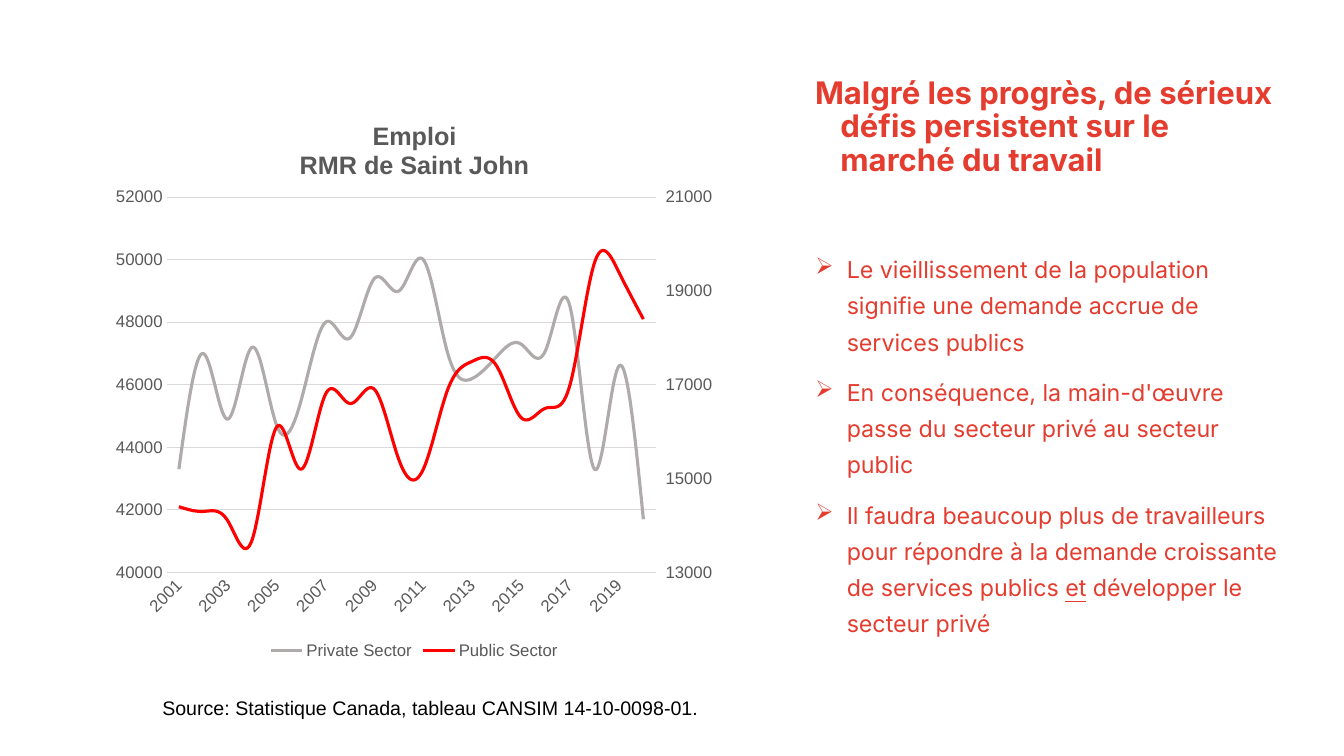
from copy import deepcopy
from dataclasses import dataclass

from lxml.etree import SubElement
from pptx import Presentation
from pptx.chart.axis import ValueAxis
from pptx.chart.data import CategoryChartData
from pptx.dml.color import RGBColor
from pptx.enum.chart import XL_CHART_TYPE as ChartType
from pptx.enum.chart import XL_LEGEND_POSITION as LegendPosition
from pptx.enum.chart import XL_TICK_MARK as TickMark
from pptx.oxml import parse_xml
from pptx.oxml.ns import nsdecls, qn
from pptx.util import Cm, Pt


@dataclass(frozen=True)
class Theme:
    accent: str = "E43D30"
    ink: str = "000000"
    label: str = "595959"
    grid: str = "D9D9D9"
    private: str = "AFABAB"
    public: str = "FF0000"
    text_font: str = "Inter"
    chart_font: str = "Arial"
    heading: float = 22.2
    bullet: float = 16.6
    source: float = 14
    chart_title: float = 18
    chart_label: float = 12


THEME = Theme()

HEADING = "Malgré les progrès, de sérieux défis persistent sur le marché du travail"
SOURCE = "Source: Statistique Canada, tableau CANSIM 14-10-0098-01."
BULLETS = [
    ["Le vieillissement de la population signifie une demande accrue de services publics"],
    ["En conséquence, la main-d'œuvre passe du secteur privé au secteur public"],
    ["Il faudra beaucoup plus de travailleurs pour répondre à la demande croissante "
     "de services publics ", "et", " développer le secteur privé"],
]
UNDERLINED = "et"
CHART_TITLE = ["Emploi", "RMR de Saint John"]
YEARS = [str(year) for year in range(2001, 2021)]
PRIVATE = [43300, 47000, 44900, 47200, 44700, 45500, 48000, 47500, 49400, 49000,
           50000, 47000, 46200, 46900, 47300, 47100, 48500, 43300, 46600, 41700]
PUBLIC = [14400, 14300, 14100, 13700, 16100, 15200, 16800, 16600, 16900, 15400,
          15200, 16900, 17500, 17400, 16300, 16500, 17000, 19600, 19400, 18400]


def set_font(font, name, size, color, bold=False):
    font.name = name
    font.size = Pt(size)
    font.bold = bold
    font.color.rgb = RGBColor.from_string(color)


def add_box(page, left, top, width, height):
    box = page.shapes.add_textbox(Cm(left), Cm(top), Cm(width), Cm(height))
    box.text_frame.word_wrap = True
    return box.text_frame


def set_indent(para, left, hanging):
    properties = para._p.get_or_add_pPr()
    properties.set("marL", str(Cm(left)))
    properties.set("indent", str(-Cm(hanging)))
    return properties


def add_heading(page):
    para = add_box(page, 19.66, 1.83, 12.93, 3.3).paragraphs[0]
    para.text = HEADING
    set_indent(para, 1.27, 0.64)
    para.line_spacing = 0.9
    set_font(para.font, THEME.text_font, THEME.heading, THEME.accent, bold=True)


def add_source(page):
    para = add_box(page, 3.84, 17.4, 22.99, 0.86).paragraphs[0]
    para.text = SOURCE
    set_font(para.font, THEME.chart_font, THEME.source, THEME.ink)


def add_bullets(page):
    frame = add_box(page, 19.66, 6.1, 12.93, 11)
    for index, parts in enumerate(BULLETS):
        para = frame.add_paragraph() if index else frame.paragraphs[0]
        properties = set_indent(para, 1.43, 0.79)
        bullet_color = SubElement(properties, qn("a:buClr"))
        SubElement(bullet_color, qn("a:srgbClr"), val=THEME.accent)
        SubElement(properties, qn("a:buChar"), char="➢")
        para.line_spacing = 1.3
        if index:
            para.space_before = Pt(10)
        set_font(para.font, THEME.text_font, THEME.bullet, THEME.accent)
        for part in parts:
            span = para.add_run()
            span.text = part
            if part == UNDERLINED:
                span.font.underline = True


def layout_xml(**places):
    target = '<c:layoutTarget val="inner"/>' if "w" in places else ""
    modes = "".join(f'<c:{key}Mode val="edge"/>' for key in "xy")
    values = "".join(f'<c:{key} val="{value}"/>' for key, value in places.items())
    return parse_xml(f'<c:layout {nsdecls("c")}><c:manualLayout>{target}{modes}{values}'
                     "</c:manualLayout></c:layout>")


def replace_layout(parent, position, layout):
    for previous in parent.findall(qn("c:layout")):
        parent.remove(previous)
    parent.insert(position, layout)


def style_axis(axis):
    axis.major_tick_mark = TickMark.NONE
    axis.minor_tick_mark = TickMark.NONE
    set_font(axis.tick_labels.font, THEME.chart_font, THEME.chart_label, THEME.label)


def set_line(line, color, width):
    line.color.rgb = RGBColor.from_string(color)
    line.width = Pt(width)


def set_range(axis, low, high, step):
    axis.minimum_scale, axis.maximum_scale, axis.major_unit = low, high, step


def style_axes(chart):
    years, jobs = chart.category_axis, chart.value_axis
    style_axis(years)
    style_axis(jobs)
    set_line(years.format.line, THEME.grid, 0.75)
    jobs.format.line.fill.background()
    jobs.has_major_gridlines = True
    set_line(jobs.major_gridlines.format.line, THEME.grid, 0.75)
    set_range(jobs, 40000, 52000, 2000)

    element = chart.element.find(".//" + qn("c:catAx"))
    element.find(qn("c:txPr")).find(qn("a:bodyPr")).set("rot", "-2700000")
    skip = parse_xml(f'<c:tickLblSkip {nsdecls("c")} val="2"/>')
    element.find(qn("c:noMultiLvlLbl")).addprevious(skip)

    element = chart.element.find(".//" + qn("c:valAx"))
    if element.find(qn("c:crossBetween")) is None:
        between = parse_xml(f'<c:crossBetween {nsdecls("c")} val="between"/>')
        element.find(qn("c:crosses")).addnext(between)
    element.find(qn("c:crossBetween")).set("val", "between")


def move_public_to_right_axis(chart):
    plot = chart.element.find(".//" + qn("c:plotArea"))
    left_lines, years, jobs = (plot.find(qn(tag)) for tag in ("c:lineChart", "c:catAx", "c:valAx"))
    right_lines, right_years, right_jobs = map(deepcopy, (left_lines, years, jobs))
    left_lines.remove(left_lines.findall(qn("c:ser"))[1])
    right_lines.remove(right_lines.findall(qn("c:ser"))[0])
    for link, number in zip(right_lines.findall(qn("c:axId")), ("5001", "5002")):
        link.set("val", number)
    for axis, own, other in ((right_years, "5001", "5002"), (right_jobs, "5002", "5001")):
        axis.find(qn("c:axId")).set("val", own)
        axis.find(qn("c:crossAx")).set("val", other)
    right_years.find(qn("c:delete")).set("val", "1")
    right_jobs.find(qn("c:axPos")).set("val", "r")
    right_jobs.find(qn("c:crosses")).set("val", "max")
    left_lines.addnext(right_lines)
    jobs.addnext(right_jobs)
    right_jobs.addnext(right_years)

    axis = ValueAxis(right_jobs)
    axis.has_major_gridlines = False
    axis.major_tick_mark = TickMark.OUTSIDE
    set_range(axis, 13000, 21000, 2000)


def add_chart_title(chart):
    frame = chart.chart_title.text_frame
    for index, text in enumerate(CHART_TITLE):
        para = frame.add_paragraph() if index else frame.paragraphs[0]
        para.text = text
        set_font(para.font, THEME.chart_font, THEME.chart_title, THEME.label, bold=True)
    replace_layout(chart.element.find(".//" + qn("c:title")), 1, layout_xml(x=0.31, y=0.04))


def add_employment_chart(page):
    data = CategoryChartData()
    data.categories = YEARS
    data.add_series("Private Sector", PRIVATE)
    data.add_series("Public Sector", PUBLIC)
    chart = page.shapes.add_chart(
        ChartType.LINE, Cm(2.64), Cm(2.39), Cm(15.6), Cm(14.33), data).chart
    set_font(chart.font, THEME.chart_font, THEME.chart_label, THEME.label)
    add_chart_title(chart)
    chart.has_legend = True
    chart.legend.position = LegendPosition.BOTTOM
    chart.legend.include_in_layout = False
    set_font(chart.legend.font, THEME.chart_font, THEME.chart_label, THEME.label)
    chart.plots[0].vary_by_categories = False
    for series, color in zip(chart.plots[0].series, (THEME.private, THEME.public)):
        series.smooth = True
        set_line(series.format.line, color, 2.25)
    style_axes(chart)
    move_public_to_right_axis(chart)
    replace_layout(chart.element.find(".//" + qn("c:plotArea")), 0,
                   layout_xml(x=0.1, y=0.18, w=0.79, h=0.66))


def main():
    deck = Presentation()
    deck.slide_width, deck.slide_height = Cm(33.87), Cm(19.05)
    page = deck.slides.add_slide(deck.slide_layouts[6])
    add_heading(page)
    add_source(page)
    add_employment_chart(page)
    add_bullets(page)
    deck.save("out.pptx")


if __name__ == "__main__":
    main()
